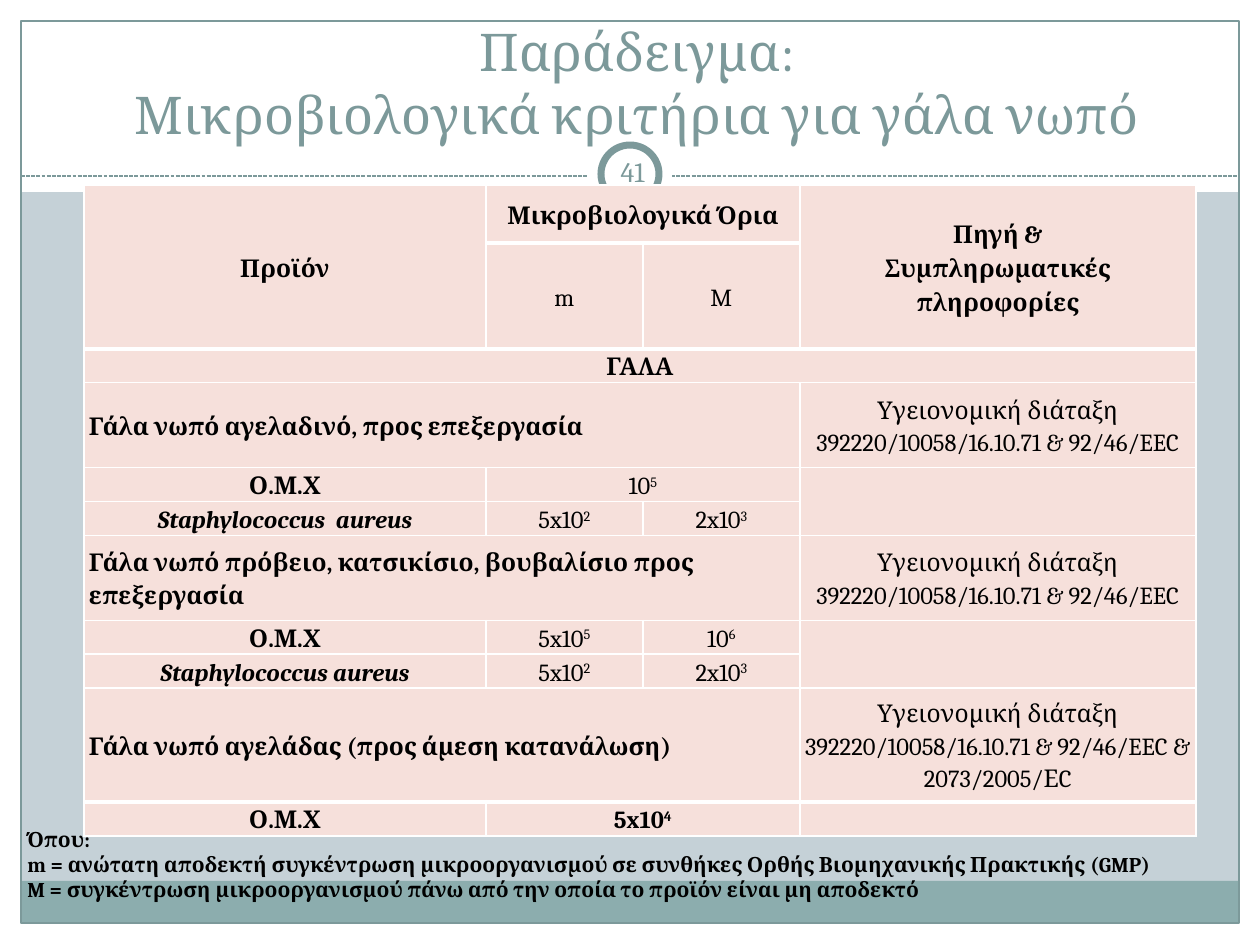
from dataclasses import dataclass
from lxml.etree import SubElement
from pptx import Presentation
from pptx.dml.color import RGBColor
from pptx.enum.dml import MSO_LINE
from pptx.enum.shapes import MSO_CONNECTOR, MSO_SHAPE
from pptx.enum.text import MSO_ANCHOR, PP_ALIGN
from pptx.oxml.ns import qn
from pptx.util import Pt

PX = 9144000 // 1260


@dataclass(frozen=True)
class Theme:
    font: str = "Cambria"
    background: str = "C5D1D7"
    white: str = "FFFFFF"
    accent: str = "7C999A"
    band: str = "8CADAE"
    cell: str = "F6E0DB"
    ink: str = "000000"
    title_size: float = 29.7
    number_size: float = 16
    table_size: float = 14
    note_size: float = 12
    thin: float = 0.75
    ring: float = 4
    grid: float = 1
    thick_grid: float = 3


THEME = Theme()

TITLE = ["Παράδειγμα:", "Μικροβιολογικά κριτήρια για γάλα νωπό"]
NUMBER = "41"
NOTES = [
    "Όπου:",
    "m = ανώτατη αποδεκτή συγκέντρωση μικροοργανισμού σε συνθήκες Ορθής Βιομηχανικής Πρακτικής (GMP)",
    "M = συγκέντρωση μικροοργανισμού πάνω από την οποία το προϊόν είναι μη αποδεκτό",
]

COLUMNS = [402, 157, 157, 396]
ROWS = [58, 100, 33, 85, 33, 32, 85, 33, 32, 114, 33]
THICK_BELOW = {0, 1, 9}
SOURCE = "Υγειονομική διάταξη 392220/10058/16.10.71 & 92/46/EEC"

# row, column, row span, column span, style, text ("^" starts a superscript, "\n" a paragraph)
CELLS = [
    (0, 0, 2, 1, "head", "Προϊόν"),
    (0, 1, 1, 2, "head", "Μικροβιολογικά Όρια"),
    (0, 3, 2, 1, "head", "Πηγή &\nΣυμπληρωματικές πληροφορίες"),
    (1, 1, 1, 1, "value", "m"),
    (1, 2, 1, 1, "value", "M"),
    (2, 0, 1, 4, "strong", "ΓΑΛΑ"),
    (3, 0, 1, 3, "product", "Γάλα νωπό αγελαδινό, προς επεξεργασία"),
    (3, 3, 1, 1, "value", SOURCE),
    (4, 0, 1, 1, "strong", "Ο.Μ.Χ"),
    (4, 1, 1, 2, "value", "10^5"),
    (4, 3, 2, 1, "value", ""),
    (5, 0, 1, 1, "species", "Staphylococcus  aureus"),
    (5, 1, 1, 1, "value", "5x10^2"),
    (5, 2, 1, 1, "value", "2x10^3"),
    (6, 0, 1, 3, "product", "Γάλα νωπό πρόβειο, κατσικίσιο, βουβαλίσιο προς επεξεργασία"),
    (6, 3, 1, 1, "value", SOURCE),
    (7, 0, 1, 1, "strong", "Ο.Μ.Χ"),
    (7, 1, 1, 1, "value", "5x10^5"),
    (7, 2, 1, 1, "value", "10^6"),
    (7, 3, 2, 1, "value", ""),
    (8, 0, 1, 1, "species", "Staphylococcus aureus"),
    (8, 1, 1, 1, "value", "5x10^2"),
    (8, 2, 1, 1, "value", "2x10^3"),
    (9, 0, 1, 3, "product", "Γάλα νωπό αγελάδας (προς άμεση κατανάλωση)"),
    (9, 3, 1, 1, "value", SOURCE + " & 2073/2005/ΕC"),
    (10, 0, 1, 1, "strong", "Ο.Μ.Χ"),
    (10, 1, 1, 2, "strong", "5x10^4"),
]

# alignment, bold, italic, line spacing
STYLES = {
    "head": (PP_ALIGN.CENTER, True, False, 1.2),
    "strong": (PP_ALIGN.CENTER, True, False, 1.15),
    "value": (PP_ALIGN.CENTER, False, False, 1.15),
    "species": (PP_ALIGN.CENTER, True, True, 1.15),
    "product": (PP_ALIGN.LEFT, True, False, 1.15),
}

# preset, box, fill, line colour, line width
FRAME = [
    (MSO_SHAPE.RECTANGLE, (0, 924, 1260, 21), THEME.white, None, 0),
    (MSO_SHAPE.RECTANGLE, (0, 0, 1260, 192), THEME.white, None, 0),
    (MSO_SHAPE.RECTANGLE, (0, 0, 21, 945), THEME.white, None, 0),
    (MSO_SHAPE.RECTANGLE, (1239, 0, 21, 945), THEME.white, None, 0),
    (MSO_SHAPE.RECTANGLE, (21, 881, 1218, 43), THEME.band, None, 0),
    (MSO_SHAPE.RECTANGLE, (21, 21, 1218, 902), None, THEME.accent, THEME.thin),
]
BADGE = [
    (MSO_SHAPE.OVAL, (588, 132, 84, 84), THEME.white, None, 0),
    (MSO_SHAPE.OVAL, (601, 145, 58, 58), THEME.white, THEME.accent, THEME.ring),
]


def emu(*lengths):
    return [length * PX for length in lengths]


def rgb(value):
    return RGBColor.from_string(value)


def add_run(paragraph, text, size, color, bold=False, italic=False):
    run = paragraph.add_run()
    run.text = text
    font = run.font
    font.name, font.size, font.bold, font.italic = THEME.font, Pt(size), bold, italic
    font.color.rgb = rgb(color)
    return run


def paragraphs_for(frame, lines):
    """Yield one paragraph of the frame with each line."""
    for index, line in enumerate(lines):
        yield (frame.add_paragraph() if index else frame.paragraphs[0]), line


def add_shapes(slide, items):
    for preset, box, fill, line, width in items:
        shape = slide.shapes.add_shape(preset, *emu(*box))
        shape.shadow.inherit = False
        if fill:
            shape.fill.solid()
            shape.fill.fore_color.rgb = rgb(fill)
        else:
            shape.fill.background()
        if line:
            shape.line.color.rgb = rgb(line)
            shape.line.width = Pt(width)
        else:
            shape.line.fill.background()


def add_divider(slide):
    line = slide.shapes.add_connector(MSO_CONNECTOR.STRAIGHT, *emu(21, 176, 1239, 176))
    line.line.color.rgb = rgb(THEME.accent)
    line.line.width = Pt(THEME.thin)
    line.line.dash_style = MSO_LINE.SQUARE_DOT
    SubElement(line._element.spPr, qn("a:effectLst"))


def place_title(slide):
    title = slide.shapes.title
    slide.shapes._spTree.append(title._element)  # in front of the white frame
    title.left, title.top, title.width, title.height = emu(44, 26, 1186, 125)
    title.text_frame.vertical_anchor = MSO_ANCHOR.BOTTOM
    paragraph = title.text_frame.paragraphs[0]
    paragraph.alignment = PP_ALIGN.CENTER
    for index, line in enumerate(TITLE):
        if index:
            paragraph.add_line_break()
        add_run(paragraph, line, THEME.title_size, THEME.accent)


def add_text(slide, box, lines, size, color, bold=False):
    frame = slide.shapes.add_textbox(*emu(*box)).text_frame
    frame.word_wrap = True
    for paragraph, line in paragraphs_for(frame, lines):
        add_run(paragraph, line, size, color, bold)
    return frame


def format_cell(cell, row):
    cell.fill.solid()
    cell.fill.fore_color.rgb = rgb(THEME.cell)
    cell.vertical_anchor = MSO_ANCHOR.MIDDLE
    cell.margin_left = cell.margin_right = 5 * PX
    cell.margin_top = cell.margin_bottom = 0
    end = cell.text_frame.paragraphs[0]._p.get_or_add_endParaRPr()
    end.set("sz", str(THEME.table_size * 100))
    properties = cell._tc.get_or_add_tcPr()
    thick = {"lnT": row - 1 in THICK_BELOW, "lnB": row in THICK_BELOW}
    for index, edge in enumerate(("lnL", "lnR", "lnT", "lnB")):
        width = THEME.thick_grid if thick.get(edge) else THEME.grid
        line = SubElement(properties, qn(f"a:{edge}"), w=str(Pt(width)))
        SubElement(SubElement(line, qn("a:solidFill")), qn("a:srgbClr"), val=THEME.white)
        properties.insert(index, line)  # borders come before the fill


def write_cell(cell, style, text):
    alignment, bold, italic, spacing = STYLES[style]
    for paragraph, line in paragraphs_for(cell.text_frame, text.split("\n")):
        paragraph.alignment, paragraph.line_spacing = alignment, spacing
        for index, part in enumerate(line.split("^") if line else []):
            run = add_run(paragraph, part, THEME.table_size, THEME.ink, bold, italic)
            if index:
                run.font._element.set("baseline", "30000")


def add_criteria_table(slide):
    box = emu(84, 185, sum(COLUMNS), sum(ROWS))
    table = slide.shapes.add_table(len(ROWS), len(COLUMNS), *box).table
    for column, width in zip(table.columns, COLUMNS):
        column.width = width * PX
    for index, (row, height) in enumerate(zip(table.rows, ROWS)):
        row.height = height * PX
        for cell in row.cells:
            format_cell(cell, index)
    for row, column, down, across, style, text in CELLS:
        cell = table.cell(row, column)
        if down * across > 1:
            cell.merge(table.cell(row + down - 1, column + across - 1))
        write_cell(cell, style, text)


def main():
    presentation = Presentation()
    presentation.slide_width, presentation.slide_height = emu(1260, 945)
    slide = presentation.slides.add_slide(presentation.slide_layouts[5])
    slide.background.fill.solid()
    slide.background.fill.fore_color.rgb = rgb(THEME.background)
    add_shapes(slide, FRAME)
    add_divider(slide)
    add_shapes(slide, BADGE)
    place_title(slide)
    number = add_text(slide, (601, 141, 63, 60), [NUMBER], THEME.number_size, THEME.accent)
    number.vertical_anchor = MSO_ANCHOR.MIDDLE
    number.margin_left = number.margin_right = 6 * PX
    number.paragraphs[0].alignment = PP_ALIGN.CENTER
    add_criteria_table(slide)
    add_text(slide, (15, 820, 1245, 90), NOTES, THEME.note_size, THEME.ink, bold=True)
    presentation.save("out.pptx")


if __name__ == "__main__":
    main()
